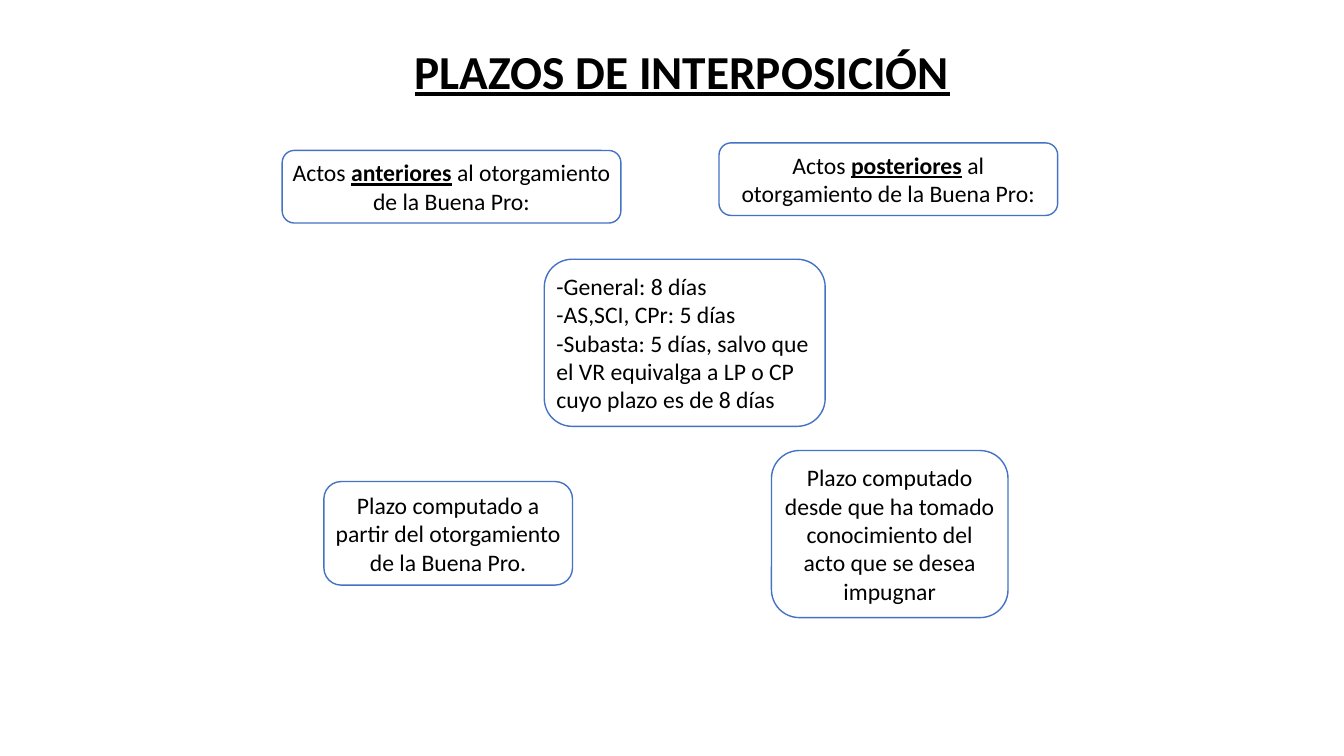
from dataclasses import dataclass

from pptx import Presentation
from pptx.dml.color import RGBColor
from pptx.enum.shapes import MSO_SHAPE
from pptx.enum.text import MSO_ANCHOR, MSO_AUTO_SIZE, PP_ALIGN
from pptx.slide import Slide
from pptx.text.text import TextFrame
from pptx.util import Inches, Pt

BLACK = RGBColor(0x00, 0x00, 0x00)
WHITE = RGBColor(0xFF, 0xFF, 0xFF)
BLUE = RGBColor(0x44, 0x72, 0xC4)

SLIDE_WIDTH = Inches(13.33)
SLIDE_HEIGHT = Inches(7.5)
INSET = Inches(0.04)
EMPHASIS = "*"  # encloses bold, underlined words


@dataclass(frozen=True)
class Area:
    """Position and size as percentages of the slide."""
    left: float
    top: float
    width: float
    height: float

    def place(self, shape) -> None:
        shape.left, shape.top, shape.width, shape.height = self.lengths()

    def lengths(self) -> tuple[int, int, int, int]:
        return (int(SLIDE_WIDTH * self.left / 100),
                int(SLIDE_HEIGHT * self.top / 100),
                int(SLIDE_WIDTH * self.width / 100),
                int(SLIDE_HEIGHT * self.height / 100))


@dataclass(frozen=True)
class Box:
    area: Area
    text: str
    alignment: PP_ALIGN = PP_ALIGN.CENTER


TITLE_AREA = Area(30.1, 4.9, 41.6, 8.9)

BOXES = (
    # Deadlines
    Box(Area(40.5, 34.3, 20.9, 22.1),
        "-General: 8 días\n"
        "-AS,SCI, CPr: 5 días\n"
        "-Subasta: 5 días, salvo que el VR equivalga a LP o CP "
        "cuyo plazo es de 8 días",
        PP_ALIGN.LEFT),
    # How each deadline is counted
    Box(Area(24.1, 63.7, 18.5, 13.7),
        "Plazo computado a partir del otorgamiento de la Buena Pro."),
    Box(Area(57.4, 59.6, 17.6, 22.1),
        "Plazo computado desde que ha tomado conocimiento del acto "
        "que se desea impugnar"),
    # Kinds of acts
    Box(Area(21.0, 19.9, 25.2, 9.6),
        "Actos *anteriores* al otorgamiento de la Buena Pro:"),
    Box(Area(53.5, 18.9, 25.2, 9.6),
        "Actos *posteriores* al otorgamiento de la Buena Pro:"),
)


def write_text(frame: TextFrame, text: str, *, size: float,
               alignment: PP_ALIGN, anchor: MSO_ANCHOR, wrap: bool) -> None:
    frame.word_wrap = wrap
    frame.auto_size = MSO_AUTO_SIZE.SHAPE_TO_FIT_TEXT
    frame.vertical_anchor = anchor
    for index, line in enumerate(text.split("\n")):
        paragraph = frame.add_paragraph() if index else frame.paragraphs[0]
        paragraph.alignment = alignment
        for position, piece in enumerate(line.split(EMPHASIS)):
            if not piece:
                continue
            run = paragraph.add_run()
            run.text = piece
            run.font.name = "Calibri"
            run.font.size = Pt(size)
            run.font.color.rgb = BLACK
            run.font.bold = run.font.underline = position % 2 == 1


def add_box(slide: Slide, box: Box) -> None:
    shape = slide.shapes.add_shape(MSO_SHAPE.ROUNDED_RECTANGLE,
                                   *box.area.lengths())
    shape.shadow.inherit = False
    shape.fill.solid()
    shape.fill.fore_color.rgb = WHITE
    shape.line.color.rgb = BLUE
    shape.line.width = Pt(1)
    frame = shape.text_frame
    frame.margin_left = frame.margin_right = INSET
    frame.margin_top = frame.margin_bottom = INSET
    write_text(frame, box.text, size=16.9, alignment=box.alignment,
               anchor=MSO_ANCHOR.MIDDLE, wrap=True)


def main() -> None:
    presentation = Presentation()
    presentation.slide_width = SLIDE_WIDTH
    presentation.slide_height = SLIDE_HEIGHT
    slide = presentation.slides.add_slide(
        presentation.slide_layouts.get_by_name("Title Only"))

    # Title
    title = slide.shapes.title
    TITLE_AREA.place(title)
    write_text(title.text_frame, "*PLAZOS DE INTERPOSICIÓN*", size=33.8,
               alignment=PP_ALIGN.LEFT, anchor=MSO_ANCHOR.TOP, wrap=False)

    # Boxes
    for box in BOXES:
        add_box(slide, box)

    presentation.save("out.pptx")


if __name__ == "__main__":
    main()
